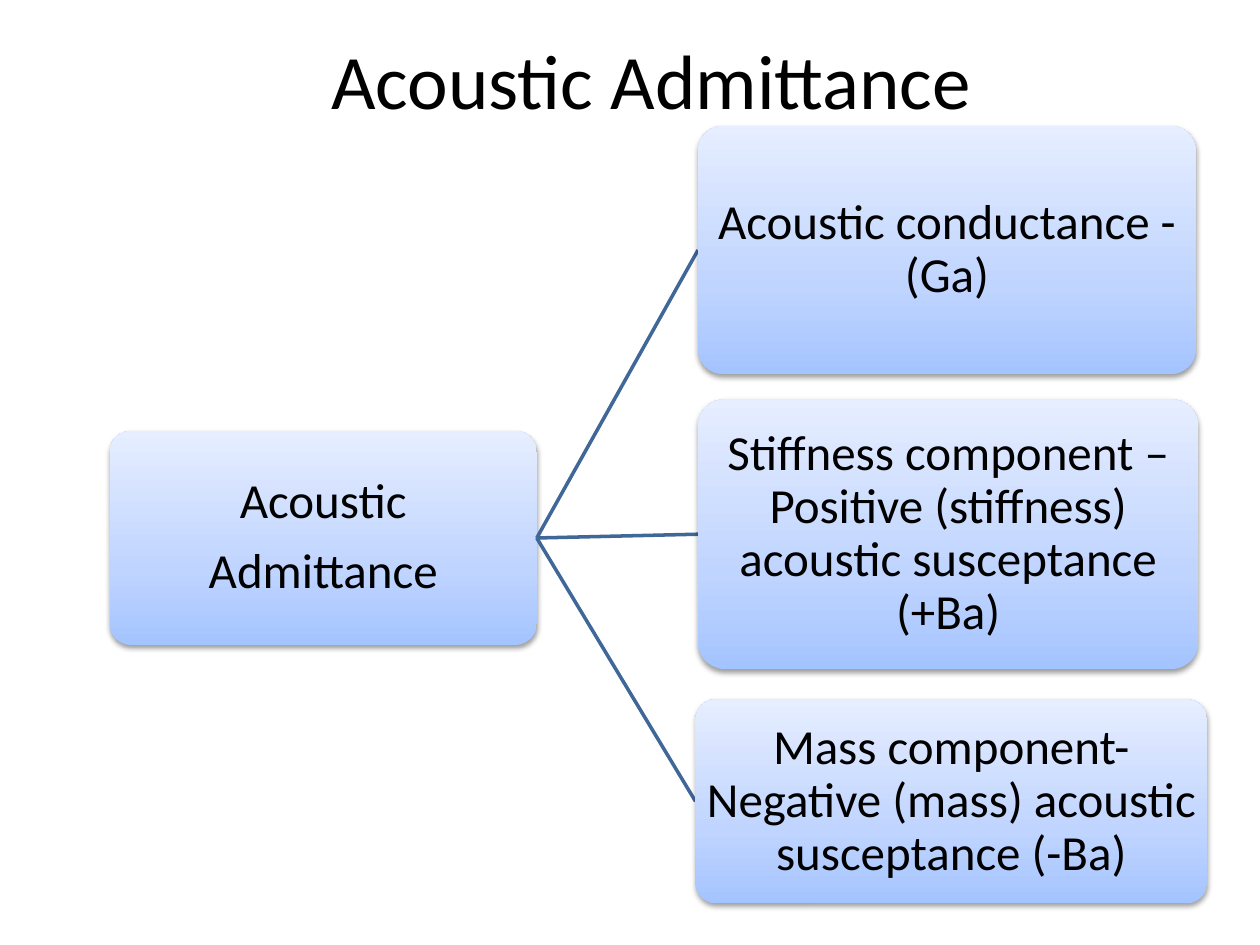
from copy import deepcopy
from dataclasses import dataclass

from lxml import etree
from pptx import Presentation
from pptx.dml.color import RGBColor
from pptx.enum import shapes, text
from pptx.oxml import ns
from pptx.util import Inches, Pt

COLORS = {
    "text": "000000",
    "link": "3F6797",
    "shadow": "000000",
    "bottom": "A4C4FF",
    "middle": "BFD4FF",
    "top": "E6EEFF",
}
GRADIENT = [(0, "bottom"), (0.35, "middle"), (1, "top")]
FONT = "Calibri"


@dataclass
class Node:
    left: float
    top: float
    width: float
    height: float
    lines: list[str]


ADMITTANCE = Node(0.87, 3.42, 3.39, 1.7, ["Acoustic", "Admittance"])
COMPONENTS = [
    Node(5.54, 1, 3.95, 1.97, ["Acoustic conductance - (Ga)"]),
    Node(5.54, 3.17, 3.97, 2.14,
         ["Stiffness component – Positive (stiffness) acoustic susceptance (+Ba)"]),
    Node(5.52, 5.55, 4.06, 1.62,
         ["Mass component-Negative (mass) acoustic susceptance (-Ba)"]),
]


def rgb(name: str) -> RGBColor:
    return RGBColor.from_string(COLORS[name])


def write_lines(frame, lines: list[str], size: float) -> None:
    frame.word_wrap = True
    frame.vertical_anchor = text.MSO_ANCHOR.MIDDLE
    for index, line in enumerate(lines):
        paragraph = frame.add_paragraph() if index else frame.paragraphs[0]
        paragraph.alignment = text.PP_ALIGN.CENTER
        run = paragraph.add_run()
        run.text = line
        run.font.name = FONT
        run.font.size = Pt(size)
        run.font.color.rgb = rgb("text")


def fill_gradient(fill) -> None:
    fill.gradient()
    fill.gradient_angle = 90
    first = fill._fill._gradFill.gsLst[0]
    first.addnext(deepcopy(first))
    for stop, (position, color) in zip(fill.gradient_stops, GRADIENT):
        stop.position = position
        stop.color.rgb = rgb(color)


def cast_shadow(shape) -> None:
    shape.shadow.inherit = False
    effects = shape._element.spPr.find(ns.qn("a:effectLst"))
    shadow = etree.SubElement(
        effects, ns.qn("a:outerShdw"), blurRad=str(Pt(3.1)),
        dist=str(Pt(1.6)), dir="5400000", rotWithShape="0")
    color = etree.SubElement(shadow, ns.qn("a:srgbClr"), val=COLORS["shadow"])
    etree.SubElement(color, ns.qn("a:alpha"), val="38000")


def draw_node(slide, node: Node) -> None:
    box = slide.shapes.add_shape(
        shapes.MSO_SHAPE.ROUNDED_RECTANGLE, Inches(node.left), Inches(node.top),
        Inches(node.width), Inches(node.height))
    box.adjustments[0] = 0.1
    fill_gradient(box.fill)
    box.line.fill.background()
    cast_shadow(box)
    frame = box.text_frame
    frame.margin_left = frame.margin_right = Inches(0.02)
    frame.margin_top = frame.margin_bottom = Inches(0.02)
    write_lines(frame, node.lines, 28)
    for paragraph in frame.paragraphs:
        paragraph.line_spacing = 0.9
        paragraph.space_after = Pt(9.8)


def draw_link(slide, source: Node, target: Node) -> None:
    link = slide.shapes.add_connector(
        shapes.MSO_CONNECTOR.STRAIGHT,
        Inches(source.left + source.width), Inches(source.top + source.height / 2),
        Inches(target.left), Inches(target.top + target.height / 2))
    link.line.color.rgb = rgb("link")
    link.line.width = Pt(2)
    etree.SubElement(link._element.spPr, ns.qn("a:effectLst"))


def main() -> None:
    deck = Presentation()
    deck.slide_width, deck.slide_height = Inches(10), Inches(7.5)
    slide = deck.slides.add_slide(deck.slide_layouts[6])
    title = slide.shapes.add_textbox(Inches(0.67), 0, Inches(9), Inches(1.25))
    write_lines(title.text_frame, ["Acoustic Admittance"], 44)
    draw_node(slide, ADMITTANCE)
    for component in COMPONENTS:
        draw_link(slide, ADMITTANCE, component)
        draw_node(slide, component)
    deck.save("out.pptx")


if __name__ == "__main__":
    main()
